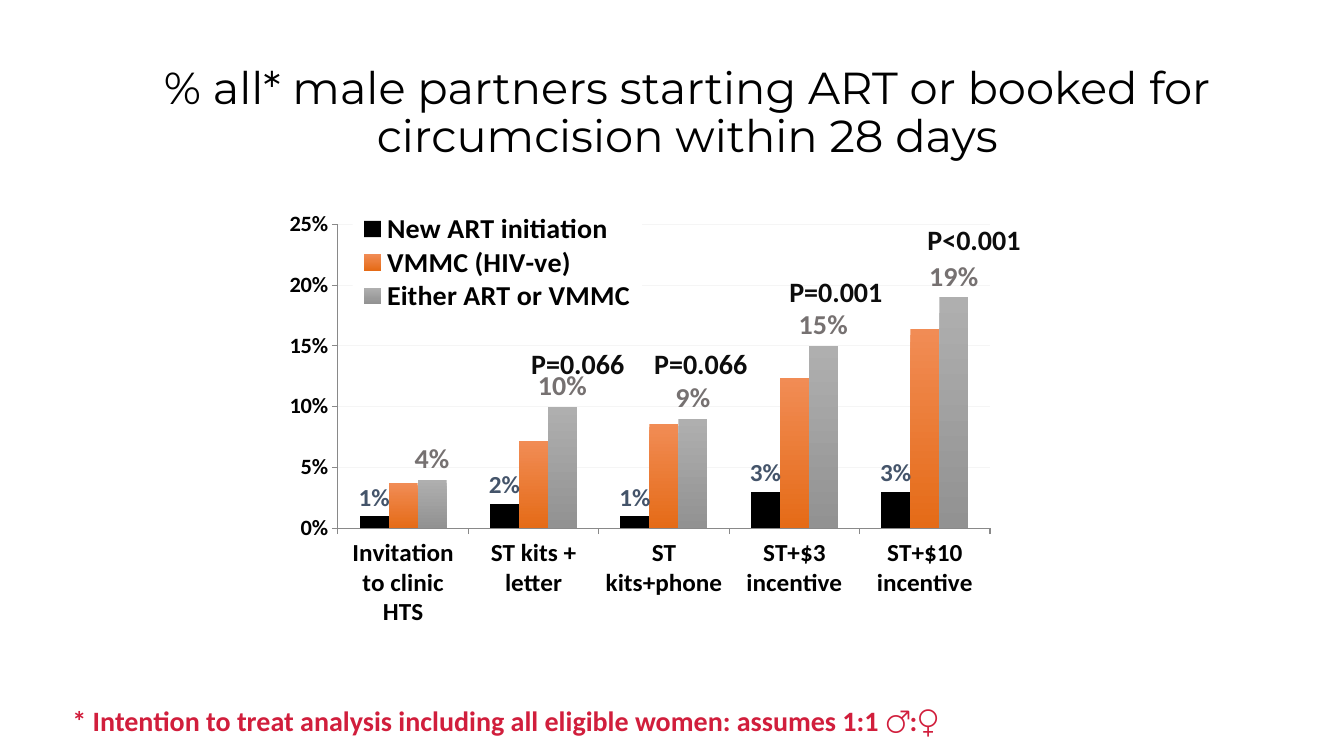
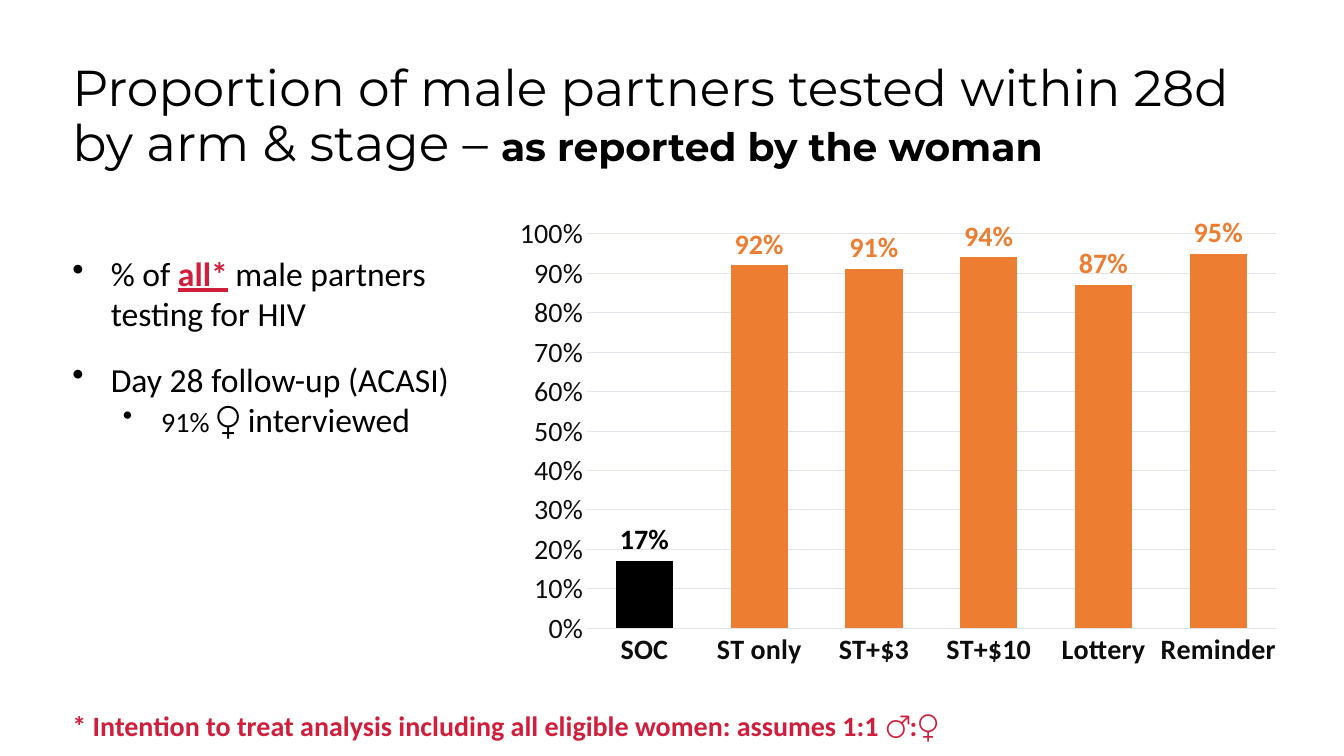
import pptx
import pptx.chart.data
import pptx.dml.color
import pptx.enum.chart
import pptx.enum.text
import pptx.oxml
import pptx.oxml.ns
import pptx.util
from lxml import etree

Inches = pptx.util.Inches
Pt = pptx.util.Pt
RGBColor = pptx.dml.color.RGBColor
Tick = pptx.enum.chart.XL_TICK_MARK
Align = pptx.enum.text.PP_ALIGN
Anchor = pptx.enum.text.MSO_ANCHOR
qn = pptx.oxml.ns.qn

BLACK = RGBColor(0x00, 0x00, 0x00)
WHITE = RGBColor(0xFF, 0xFF, 0xFF)
INK = RGBColor(0x0D, 0x0D, 0x0D)
RED = RGBColor(0xD1, 0x1E, 0x3C)
ORANGE = RGBColor(0xED, 0x7D, 0x31)
ORANGE_LIGHT = RGBColor(0xF1, 0x8C, 0x55)
ORANGE_DARK = RGBColor(0xE5, 0x6B, 0x17)
GRAY_LIGHT = RGBColor(0xAF, 0xAF, 0xAF)
GRAY_DARK = RGBColor(0x92, 0x92, 0x92)
GRAY_TEXT = RGBColor(0x76, 0x71, 0x71)
SLATE = RGBColor(0x44, 0x54, 0x6A)
AXIS = RGBColor(0x89, 0x89, 0x89)
GRID_FAINT = RGBColor(0xF5, 0xF5, 0xF5)
GRID = RGBColor(0xE0, 0xE5, 0xEB)

TITLE_FONT = "Montserrat"
BODY_FONT = "Calibri"
MARGIN = 0.62
FOOTNOTE = "* Intention to treat analysis including all eligible women: assumes 1:1 ♂:♀"


def style_font(font, size, color, bold=False, name=BODY_FONT):
    font.name = name
    font.size = Pt(size)
    font.bold = bold
    font.color.rgb = color


def add_span(para, text, size, color=BLACK, bold=False, name=BODY_FONT):
    span = para.add_run()
    span.text = text
    style_font(span.font, size, color, bold, name)
    return span


def add_text_box(page, box, wrap=True, inset=None):
    frame = page.shapes.add_textbox(*map(Inches, box)).text_frame
    frame.word_wrap = wrap
    if inset is not None:
        frame.margin_left = frame.margin_right = Inches(inset)
        frame.margin_top = frame.margin_bottom = Inches(inset)
    return frame


def add_title(page, box, spans, align):
    frame = add_text_box(page, box)
    frame.vertical_anchor = Anchor.MIDDLE
    para = frame.paragraphs[0]
    para.alignment = align
    para.line_spacing = 0.9
    for text, size, bold in spans:
        add_span(para, text, size, bold=bold, name=TITLE_FONT)


def add_footnote(page, top):
    frame = add_text_box(page, (MARGIN, top, 10.98, 0.54), inset=0.1)
    add_span(frame.paragraphs[0], FOOTNOTE, 20, RED, True)


def set_bullet(para, left, level=0):
    para.level = level
    properties = para._p.get_or_add_pPr()
    properties.set("marL", str(Inches(left)))
    properties.set("indent", str(Inches(-0.38)))
    etree.SubElement(properties, qn("a:buChar")).set("char", "•")


def make_layout(x, y, width, height, inner=False):
    layout = etree.Element(qn("c:layout"))
    manual = etree.SubElement(layout, qn("c:manualLayout"))
    settings = [("layoutTarget", "inner")] if inner else []
    settings += [("xMode", "edge"), ("yMode", "edge"),
                 ("x", x), ("y", y), ("w", width), ("h", height)]
    for tag, value in settings:
        etree.SubElement(manual, qn("c:" + tag)).set("val", str(value))
    return layout


def place_plot(chart, *fractions):
    area = chart._chartSpace.chart.plotArea
    for old in area.findall(qn("c:layout")):
        area.remove(old)
    area.insert(0, make_layout(*fractions, inner=True))


def place_legend(legend, *fractions):
    element = legend._element
    for old in element.findall(qn("c:layout")):
        element.remove(old)
    element.find(qn("c:legendPos")).addnext(make_layout(*fractions))


def add_columns(page, box, categories, series, top_value, step, grid_color, gap, overlap):
    data = pptx.chart.data.CategoryChartData(number_format="0%")
    data.categories = categories
    for name, values in series:
        data.add_series(name, values)
    chart = page.shapes.add_chart(
        pptx.enum.chart.XL_CHART_TYPE.COLUMN_CLUSTERED, *map(Inches, box), data).chart
    chart.has_title = False
    chart.has_legend = False
    style_font(chart.font, 16, BLACK)
    plot = chart.plots[0]
    plot.vary_by_categories = False
    plot.gap_width = gap
    plot.overlap = overlap
    axis = chart.value_axis
    axis.minimum_scale = 0
    axis.maximum_scale = top_value
    axis.major_unit = step
    axis.tick_labels.number_format = "0%"
    axis.tick_labels.number_format_is_linked = False
    axis.major_gridlines.format.line.color.rgb = grid_color
    axis.major_gridlines.format.line.width = Pt(0.75)
    return chart


def style_axis(axis, size, color, bold, tick, line_color):
    style_font(axis.tick_labels.font, size, color, bold)
    axis.major_tick_mark = tick
    axis.minor_tick_mark = Tick.NONE
    if line_color is None:
        axis.format.line.fill.background()
    else:
        axis.format.line.color.rgb = line_color
        axis.format.line.width = Pt(0.75)


def add_value_labels(series, size, color):
    labels = series.data_labels
    labels.show_value = True
    labels.number_format = "0%"
    labels.number_format_is_linked = False
    labels.position = pptx.enum.chart.XL_LABEL_POSITION.OUTSIDE_END
    style_font(labels.font, size, color, True)


def fill_gradient(fill, top_color, bottom_color):
    fill.gradient()
    fill.gradient_angle = 270
    for stop, color, position in zip(fill.gradient_stops, (top_color, bottom_color), (0, 1)):
        stop.color.rgb = color
        stop.position = position


def add_uptake_chart(page, box):
    categories = ["Invitation to clinic HTS", "ST kits + letter", "ST kits+phone",
                  "ST+$3 incentive", "ST+$10 incentive"]
    series = [
        ("New ART initiation", (0.01, 0.02, 0.01, 0.03, 0.03)),
        ("VMMC (HIV-ve)", (0.037, 0.072, 0.086, 0.124, 0.164)),
        ("Either ART or VMMC", (0.04, 0.1, 0.09, 0.15, 0.19)),
    ]
    chart = add_columns(page, box, categories, series, 0.25, 0.05, GRID_FAINT, 150, 0)
    style_axis(chart.category_axis, 18, BLACK, True, Tick.OUTSIDE, AXIS)
    style_axis(chart.value_axis, 16, BLACK, True, Tick.OUTSIDE, AXIS)
    place_plot(chart, 0.09, 0.06, 0.88, 0.73)

    initiation, circumcision, either = chart.plots[0].series
    initiation.format.fill.solid()
    initiation.format.fill.fore_color.rgb = BLACK
    fill_gradient(circumcision.format.fill, ORANGE_LIGHT, ORANGE_DARK)
    fill_gradient(either.format.fill, GRAY_LIGHT, GRAY_DARK)
    add_value_labels(initiation, 18, SLATE)
    add_value_labels(either, 20, GRAY_TEXT)

    chart.has_legend = True
    legend = chart.legend
    legend.position = pptx.enum.chart.XL_LEGEND_POSITION.RIGHT
    legend.include_in_layout = False
    style_font(legend.font, 20, BLACK, True)
    place_legend(legend, 0.11, 0.03, 0.39, 0.24)
    properties = etree.Element(qn("c:spPr"))
    solid = etree.SubElement(properties, qn("a:solidFill"))
    etree.SubElement(solid, qn("a:srgbClr")).set("val", str(WHITE))
    legend._element.find(qn("c:txPr")).addprevious(properties)


def add_p_values(page, box):
    marks = [("P=0.066", 2.48, 1.41), ("P=0.066", 3.7, 1.41),
             ("P=0.001", 5.04, 0.69), ("P<0.001", 6.41, 0.18)]
    left, top = box[:2]
    for text, across, down in marks:
        frame = add_text_box(page, (left + across, top + down, 1.13, 0.44), wrap=False)
        add_span(frame.paragraphs[0], text, 20, INK, True)


def add_testing_chart(page, box):
    categories = ["SOC", "ST only", "ST+$3", "ST+$10", "Lottery", "Reminder"]
    series = [("Series 1", (0.17, 0.92, 0.91, 0.94, 0.87, 0.95))]
    chart = add_columns(page, box, categories, series, 1, 0.1, GRID, 100, -24)
    style_axis(chart.category_axis, 20, INK, True, Tick.NONE, GRID)
    style_axis(chart.value_axis, 20, INK, False, Tick.NONE, None)
    place_plot(chart, 0.11, 0.06, 0.87, 0.84)

    tested = chart.plots[0].series[0]
    tested.format.fill.solid()
    tested.format.fill.fore_color.rgb = ORANGE
    add_value_labels(tested, 20, ORANGE)
    control = tested.points[0]
    control.format.fill.solid()
    control.format.fill.fore_color.rgb = BLACK
    style_font(control.data_label.font, 20, BLACK, True)
    control.data_label.position = pptx.enum.chart.XL_LABEL_POSITION.OUTSIDE_END


def add_method_notes(page, box):
    frame = add_text_box(page, box, inset=0.1)
    para = frame.paragraphs[0]
    set_bullet(para, 0.38)
    add_span(para, "% of ", 24)
    add_span(para, "all*", 24, RED, True).font.underline = True
    add_span(para, " male partners testing for HIV", 24)

    para = frame.add_paragraph()
    para.space_before = Pt(18)
    set_bullet(para, 0.38)
    add_span(para, "Day 28 follow-up (ACASI)", 24)

    para = frame.add_paragraph()
    set_bullet(para, 0.88, level=1)
    add_span(para, "91% ", 20)
    add_span(para, "♀ interviewed", 24)


def build_uptake_page(page):
    title = "% all* male partners starting ART or booked for circumcision within 28 days"
    chart_box = (2.69, 1.98, 7.35, 4.24)
    add_title(page, (MARGIN, 0.56, 12.4, 1.14), [(title, 32, False)], Align.CENTER)
    add_uptake_chart(page, chart_box)
    add_p_values(page, chart_box)
    add_footnote(page, 6.88)


def build_testing_page(page):
    spans = [("Proportion of male partners tested within 28d by arm & stage – ", 36, False),
             ("as reported by the woman", 28, True)]
    add_title(page, (MARGIN, 0.6, 12.1, 1.14), spans, Align.LEFT)
    add_method_notes(page, (MARGIN, 2.41, 4.08, 2.07))
    add_testing_chart(page, (4.96, 2.04, 7.85, 4.66))
    add_footnote(page, 6.93)


def main():
    deck = pptx.Presentation()
    deck.slide_width = Inches(13.33)
    deck.slide_height = Inches(7.5)
    for build in (build_uptake_page, build_testing_page):
        build(deck.slides.add_slide(deck.slide_layouts[6]))
    deck.save("out.pptx")


if __name__ == "__main__":
    main()
